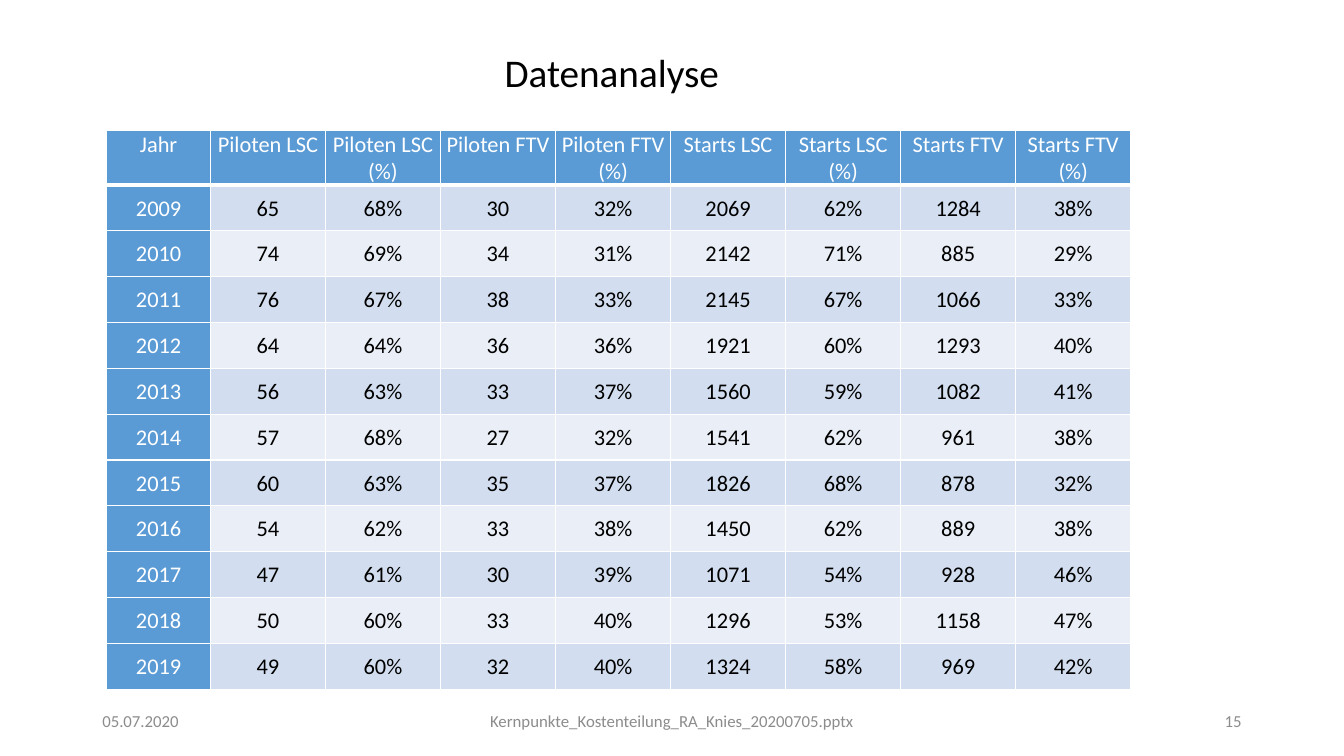
from dataclasses import dataclass

from lxml.etree import SubElement as Sub
from pptx import Presentation
from pptx.dml.color import RGBColor as RGB
from pptx.enum.text import MSO_ANCHOR as Anchor, PP_ALIGN as Align
from pptx.oxml.ns import qn
from pptx.util import Pt


@dataclass(frozen=True)
class Theme:
    font: str = "Calibri"
    black: str = "000000"
    white: str = "FFFFFF"
    gray: str = "8C8C8C"
    blue: str = "5B9BD5"
    bands: tuple = ("D2DEEF", "EAEFF7")
    title: int = 28
    body: int = 16
    small: int = 12
    thin: int = 1
    thick: int = 3


T = Theme()

HEADS = ("Jahr", "Piloten LSC", "Piloten LSC (%)", "Piloten FTV", "Piloten FTV (%)",
         "Starts LSC", "Starts LSC (%)", "Starts FTV", "Starts FTV (%)")
DATA = (
    (2009, 65, "68%", 30, "32%", 2069, "62%", 1284, "38%"),
    (2010, 74, "69%", 34, "31%", 2142, "71%", 885, "29%"),
    (2011, 76, "67%", 38, "33%", 2145, "67%", 1066, "33%"),
    (2012, 64, "64%", 36, "36%", 1921, "60%", 1293, "40%"),
    (2013, 56, "63%", 33, "37%", 1560, "59%", 1082, "41%"),
    (2014, 57, "68%", 27, "32%", 1541, "62%", 961, "38%"),
    (2015, 60, "63%", 35, "37%", 1826, "68%", 878, "32%"),
    (2016, 54, "62%", 33, "38%", 1450, "62%", 889, "38%"),
    (2017, 47, "61%", 30, "39%", 1071, "54%", 928, "46%"),
    (2018, 50, "60%", 33, "40%", 1296, "53%", 1158, "47%"),
    (2019, 49, "60%", 32, "40%", 1324, "58%", 969, "42%"),
)


def write(frame, text, size=T.body, color=T.black, align=Align.CENTER, space=None):
    """Fill a text frame with one formatted paragraph."""
    frame.word_wrap = True
    para = frame.paragraphs[0]
    para.alignment = align
    if space:
        para.line_spacing = space
    run = para.add_run()
    run.text = str(text)
    font = run.font
    font.name, font.size, font.bold = T.font, Pt(size), False
    font.color.rgb = RGB.from_string(color)


def label(slide, box, text, **style):
    """Place a text box, centred vertically."""
    shape = slide.shapes.add_textbox(*map(Pt, box))
    shape.text_frame.vertical_anchor = Anchor.MIDDLE
    write(shape.text_frame, text, **style)


def border(cell, row):
    """Draw white cell edges, with a thick rule under the header."""
    props = cell._tc.get_or_add_tcPr()
    for side in "LRTB":
        heavy = (row, side) in ((0, "B"), (1, "T"))
        width = T.thick if heavy else T.thin
        line = Sub(props, qn(f"a:ln{side}"), w=str(Pt(width)))
        Sub(Sub(line, qn("a:solidFill")), qn("a:srgbClr"), val=T.white)


def grid(slide, box, heads, data, first):
    """Build the table; the first column has its own width, the rest share."""
    rows = (heads, *data)
    width, height = box[2:]
    table = slide.shapes.add_table(len(rows), len(heads), *map(Pt, box)).table
    table.first_col = True
    rest = (width - first) / (len(heads) - 1)
    for c, col in enumerate(table.columns):
        col.width = Pt(rest if c else first)
    for r, values in enumerate(rows):
        table.rows[r].height = Pt(height / len(rows))
        for c, value in enumerate(values):
            cell = table.cell(r, c)
            inner = r > 0 and c > 0
            cell.margin_left = cell.margin_right = cell.margin_top = Pt(0.75)
            cell.margin_bottom = 0
            cell.vertical_anchor = Anchor.MIDDLE if r else Anchor.TOP
            border(cell, r)
            cell.fill.solid()
            fill = T.bands[(r - 1) % 2] if inner else T.blue
            cell.fill.fore_color.rgb = RGB.from_string(fill)
            write(cell.text_frame, value, color=T.black if inner else T.white)


def footer(slide, box, date, name, page):
    """Set date, file name and page number along the bottom."""
    left, top, width, height = box
    side, mid = 216, 324
    parts = (
        (left, side, date, Align.LEFT),
        (left + (width - mid) / 2, mid, name, Align.CENTER),
        (left + width - side, side, page, Align.RIGHT),
    )
    for x, w, text, align in parts:
        label(slide, (x, top, w, height), text, size=T.small, color=T.gray, align=align)


def main():
    deck = Presentation()
    deck.slide_width, deck.slide_height = Pt(960), Pt(540)
    slide = deck.slides.add_slide(deck.slide_layouts[6])
    # Title
    label(slide, (66, 29, 742, 49.5), "Datenanalyse", size=T.title, space=0.9)
    # Footer
    footer(slide, (66, 500.5, 828, 28.75), "05.07.2020",
           "Kernpunkte_Kostenteilung_RA_Knies_20200705.pptx", 15)
    # Pilots and launches by year
    grid(slide, (76.3, 93, 731.5, 393.2), HEADS, DATA, first=74)
    deck.save("out.pptx")


if __name__ == "__main__":
    main()
